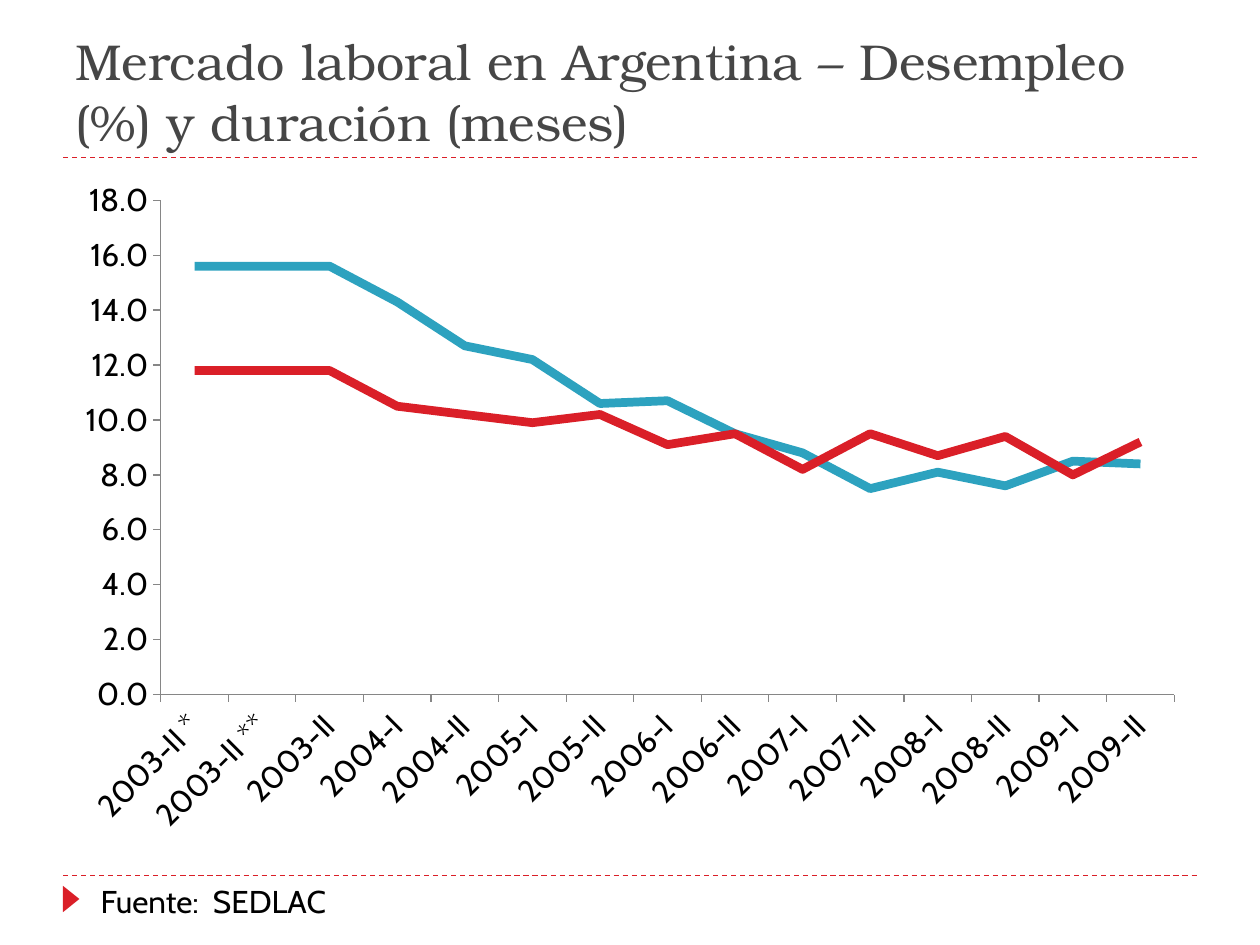
from dataclasses import dataclass

from lxml import etree
from pptx import Presentation
from pptx.chart.data import CategoryChartData
from pptx.dml.color import RGBColor
from pptx.enum.chart import XL_CHART_TYPE, XL_TICK_MARK
from pptx.enum.dml import MSO_LINE
from pptx.enum.shapes import MSO_CONNECTOR, MSO_SHAPE
from pptx.enum.text import MSO_ANCHOR, MSO_AUTO_SIZE, PP_ALIGN
from pptx.oxml.ns import qn
from pptx.util import Pt

LINE_CHART = XL_CHART_TYPE.LINE
TICK_OUTSIDE = XL_TICK_MARK.OUTSIDE
DASH = MSO_LINE.DASH
STRAIGHT = MSO_CONNECTOR.STRAIGHT
TRIANGLE = MSO_SHAPE.ISOSCELES_TRIANGLE
BOTTOM = MSO_ANCHOR.BOTTOM
LEFT = PP_ALIGN.LEFT
TITLE_ONLY = 5

PERIODS = ["2003-II *", "2003-II **", "2003-II", "2004-I", "2004-II",
           "2005-I", "2005-II", "2006-I", "2006-II", "2007-I",
           "2007-II", "2008-I", "2008-II", "2009-I", "2009-II"]
UNEMPLOYMENT = [15.6, 15.6, 15.6, 14.3, 12.7, 12.2, 10.6, 10.7,
                9.5, 8.8, 7.5, 8.1, 7.6, 8.5, 8.4]
DURATION = [11.8, 11.8, 11.8, 10.5, 10.2, 9.9, 10.2, 9.1,
            9.5, 8.2, 9.5, 8.7, 9.4, 8, 9.2]


@dataclass(frozen=True)
class Theme:
    title_font: str = "TeX Gyre Bonum"
    body_font: str = "Cabin"
    title_size: float = 28.8
    body_size: float = 18
    title_color: RGBColor = RGBColor(0x46, 0x46, 0x46)
    text_color: RGBColor = RGBColor(0, 0, 0)
    axis_color: RGBColor = RGBColor(0x86, 0x86, 0x86)
    blue: RGBColor = RGBColor(0x2D, 0xA2, 0xBF)
    red: RGBColor = RGBColor(0xDA, 0x1F, 0x28)


class SlideBuilder:
    def __init__(self, slide, theme):
        self.slide = slide
        self.theme = theme

    def style(self, font, name, size, color):
        font.name = name
        font.size = Pt(size)
        font.color.rgb = color

    def title(self, text, left, top, width, height):
        title = self.slide.shapes.title
        title.left, title.top = Pt(left), Pt(top)
        title.width, title.height = Pt(width), Pt(height)
        frame = title.text_frame
        frame.text = text
        frame.auto_size = MSO_AUTO_SIZE.NONE
        frame.vertical_anchor = BOTTOM
        paragraph = frame.paragraphs[0]
        paragraph.alignment = LEFT
        self.style(paragraph.runs[0].font, self.theme.title_font,
                   self.theme.title_size, self.theme.title_color)

    def dashed_rule(self, left, right, y):
        rule = self.slide.shapes.add_connector(
            STRAIGHT, Pt(left), Pt(y), Pt(right), Pt(y))
        rule.line.color.rgb = self.theme.red
        rule.line.width = Pt(0.75)
        rule.line.dash_style = DASH
        etree.SubElement(rule.line._get_or_add_ln().getparent(),
                         qn("a:effectLst"))

    def marker(self, left, top, width, height):
        marker = self.slide.shapes.add_shape(
            TRIANGLE, Pt(left), Pt(top), Pt(width), Pt(height))
        marker.rotation = 90
        marker.shadow.inherit = False
        marker.fill.solid()
        marker.fill.fore_color.rgb = self.theme.red
        marker.line.fill.background()

    def text(self, text, left, top, width, height):
        box = self.slide.shapes.add_textbox(
            Pt(left), Pt(top), Pt(width), Pt(height))
        frame = box.text_frame
        frame.word_wrap = True
        frame.auto_size = MSO_AUTO_SIZE.SHAPE_TO_FIT_TEXT
        frame.text = text
        self.style(frame.paragraphs[0].runs[0].font, self.theme.body_font,
                   self.theme.body_size, self.theme.text_color)

    def line_chart(self, categories, series, left, top, width, height):
        data = CategoryChartData(number_format="0.0")
        data.categories = categories
        for name, values, _ in series:
            data.add_series(name, values)
        chart = self.slide.shapes.add_chart(
            LINE_CHART, Pt(left), Pt(top), Pt(width), Pt(height), data).chart
        chart.has_legend = False
        chart.has_title = False
        self.style(chart.font, self.theme.body_font,
                   self.theme.body_size, self.theme.text_color)

        # Axes
        for axis in (chart.category_axis, chart.value_axis):
            axis.has_major_gridlines = False
            axis.major_tick_mark = TICK_OUTSIDE
            axis.format.line.color.rgb = self.theme.axis_color
            axis.format.line.width = Pt(0.75)
            self.style(axis.tick_labels.font, self.theme.body_font,
                       self.theme.body_size, self.theme.text_color)
        label_body = chart.category_axis._element.find(
            f"{qn('c:txPr')}/{qn('a:bodyPr')}")
        label_body.set("rot", "-2700000")
        values_axis = chart.value_axis
        values_axis.minimum_scale = 0
        values_axis.maximum_scale = 18
        values_axis.major_unit = 2
        values_axis.tick_labels.number_format = "0.0"
        values_axis.tick_labels.number_format_is_linked = False

        # Series lines
        plot = chart.plots[0]
        plot.vary_by_categories = False
        for line, (_, _, color) in zip(plot.series, series):
            line.smooth = False
            line.format.line.color.rgb = color
            line.format.line.width = Pt(5)


def main():
    theme = Theme()
    deck = Presentation()
    deck.slide_width, deck.slide_height = Pt(720), Pt(540)
    builder = SlideBuilder(
        deck.slides.add_slide(deck.slide_layouts[TITLE_ONLY]), theme)
    left, width = 36, 648

    # Rules and source marker
    for y in (500.4, 90):
        builder.dashed_rule(left, left + width, y)
    builder.marker(33.1, 509, 15.1, 9.4)

    # Title
    builder.title(
        "Mercado laboral en Argentina – Desempleo (%) y duración (meses)",
        left, 12.2, width, 77.8)

    # Unemployment and duration chart
    builder.line_chart(
        PERIODS,
        [("Series 1", UNEMPLOYMENT, theme.blue),
         ("Series 2", DURATION, theme.red)],
        left, 95.8, width, 388.8)

    # Source
    builder.text("Fuente:  SEDLAC", 50.4, 500.4, 270, 28.8)

    deck.save("out.pptx")


if __name__ == "__main__":
    main()
